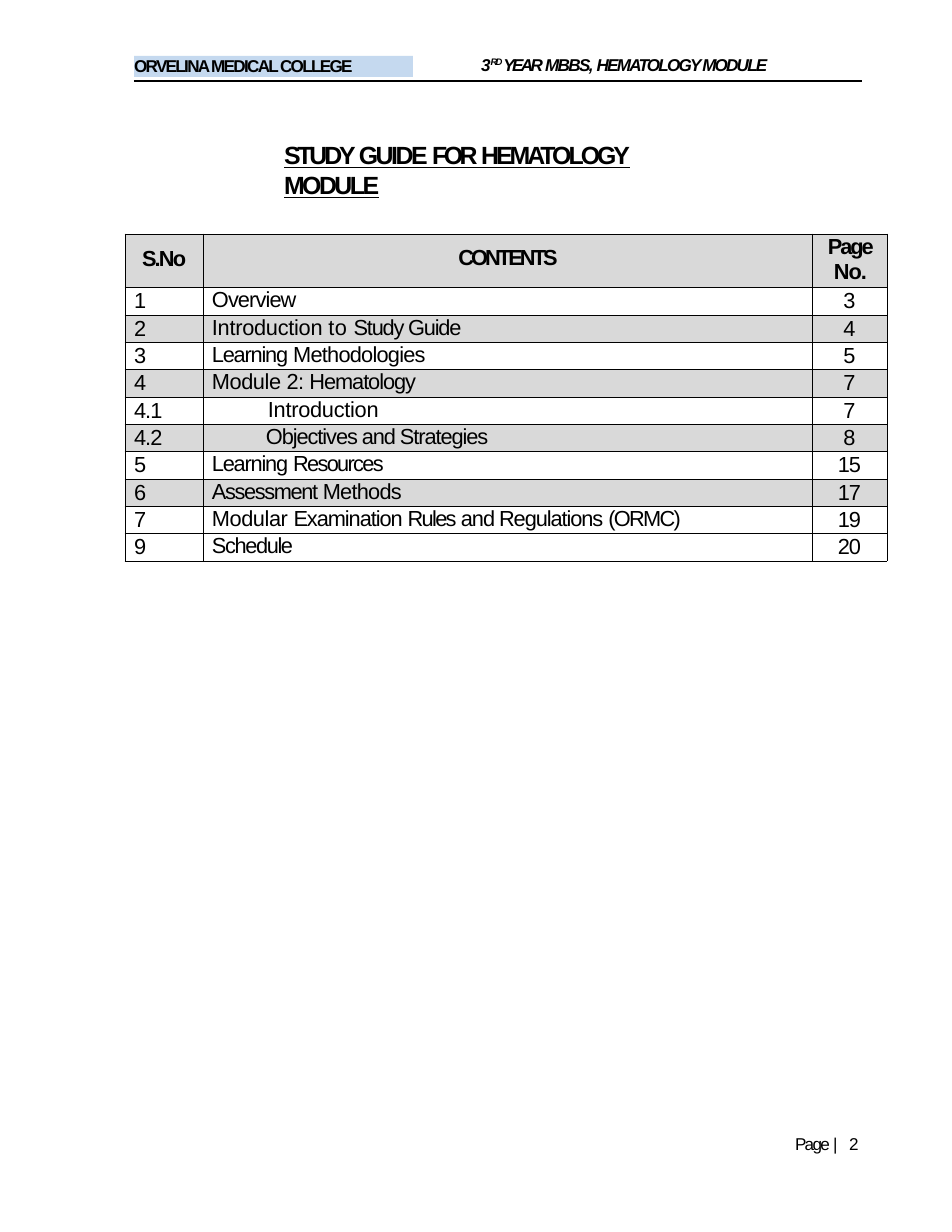
from dataclasses import dataclass
from typing import Optional, Sequence

from lxml.etree import SubElement
from pptx import Presentation
from pptx.dml.color import RGBColor
from pptx.enum.shapes import MSO_CONNECTOR, MSO_SHAPE
from pptx.enum.text import MSO_ANCHOR, MSO_AUTO_SIZE, PP_ALIGN
from pptx.oxml.ns import qn
from pptx.util import Emu, Pt

PX_PER_INCH = 112
BLACK, GRAY, BLUE = "000000", "D9D9D9", "C5D9EF"


@dataclass(frozen=True)
class Span:
    text: str
    tracking: float = 0  # points between letters
    size: Optional[float] = None
    baseline: int = 0  # percent of raise


@dataclass(frozen=True)
class Entry:
    number: Span
    topic: Sequence[Span]
    page: Span
    shaded: bool = False
    indent: int = 9


ENTRIES = [
    Entry(Span("1"), [Span("Overview", -0.6)], Span("3")),
    Entry(Span("2"), [Span("Introduction ", -0.2), Span("to ", 0.2),
                      Span("Study Guide", -0.8)], Span("4"), shaded=True),
    Entry(Span("3"), [Span("Learning ", -0.8), Span("Methodologies", -0.5)], Span("5")),
    Entry(Span("4"), [Span("Module ", -0.3), Span("2: ", -0.5),
                      Span("Hematology", -0.7)], Span("7"), shaded=True),
    Entry(Span("4.1", -0.6), [Span("Introduction", -0.2)], Span("7"), indent=65),
    Entry(Span("4.2", -0.6), [Span("Objectives and Strategies", -0.7)], Span("8"),
          shaded=True, indent=63),
    Entry(Span("5", -0.6), [Span("Learning ", -0.8), Span("Resources", -1.1)],
          Span("15", -0.8)),
    Entry(Span("6"), [Span("Assessment ", -0.9), Span("Methods", -0.5)],
          Span("17", -0.8), shaded=True),
    Entry(Span("7"), [Span("Modular ", -0.3), Span("Examination ", -0.7),
                      Span("Rules ", -1.1), Span("and Regulations ", -0.7),
                      Span("(ORMC)", -1.1)], Span("19", -0.8)),
    Entry(Span("9"), [Span("Schedule", -0.9)], Span("20", -0.7)),
]
COLUMN_WIDTHS = [78, 609, 75]
ROW_HEIGHTS = [53, 28] + [27, 27, 28] * 3


def px(length: int) -> Emu:
    return Emu(round(length * 914400 / PX_PER_INCH))


def color(value: str) -> RGBColor:
    return RGBColor.from_string(value)


def write(paragraph, spans: Sequence[Span], *, size: float = 14, bold: bool = False,
          italic: bool = False, underline: bool = False, indent: int = 0,
          before: float = 0, leading: Optional[float] = None,
          align: PP_ALIGN = PP_ALIGN.LEFT) -> None:
    paragraph.alignment = align
    paragraph.space_before = Pt(before)
    if leading:
        paragraph.line_spacing = Pt(leading)
    properties = paragraph._p.get_or_add_pPr()
    properties.set("marL", str(px(indent)))
    properties.set("indent", "0")
    for span in spans:
        run = paragraph.add_run()
        run.text = span.text
        font = run.font
        font.name, font.size = "Arial", Pt(span.size or size)
        font.bold, font.italic, font.underline = bold, italic, underline
        font.color.rgb = color(BLACK)
        run_properties = run._r.get_or_add_rPr()
        run_properties.set("spc", str(round(span.tracking * 100)))
        if span.baseline:
            run_properties.set("baseline", str(span.baseline * 1000))


def prepare_frame(shape, top_inset: int = 0):
    frame = shape.text_frame
    frame.word_wrap = True
    frame.auto_size = MSO_AUTO_SIZE.NONE
    frame.vertical_anchor = MSO_ANCHOR.TOP
    frame.margin_left = frame.margin_right = frame.margin_bottom = 0
    frame.margin_top = px(top_inset)
    return frame.paragraphs[0]


def add_text(slide, left: int, top: int, width: int, height: int,
             spans: Sequence[Span], top_inset: int = 0, **text_format) -> None:
    box = slide.shapes.add_textbox(px(left), px(top), px(width), px(height))
    write(prepare_frame(box, top_inset), spans, **text_format)


def style_cell(cell, shaded: bool, top_inset: int = 0) -> None:
    cell.margin_left = cell.margin_right = cell.margin_bottom = 0
    cell.margin_top = px(top_inset)
    cell_properties = cell._tc.get_or_add_tcPr()
    for side in ("a:lnL", "a:lnR", "a:lnT", "a:lnB"):
        border = SubElement(cell_properties, qn(side), w=str(Pt(0.5)))
        SubElement(SubElement(border, qn("a:solidFill")), qn("a:srgbClr"), val=BLACK)
    if shaded:
        cell.fill.solid()
        cell.fill.fore_color.rgb = color(GRAY)
    else:
        cell.fill.background()


def add_header(slide) -> None:
    rule = slide.shapes.add_connector(MSO_CONNECTOR.STRAIGHT, px(134), px(81),
                                      px(862), px(81))
    rule.line.color.rgb = color(BLACK)
    rule.line.width = Pt(0.75)
    SubElement(rule._element.spPr, qn("a:effectLst"))

    add_text(slide, 480, 53, 381, 22,
             [Span("3", -0.8), Span("RD ", -1.2, size=10.5, baseline=32),
              Span("YEAR ", -1.7), Span("MBBS, ", -1.1),
              Span("HEMATOLOGY MODULE", -1.2)],
             top_inset=1, size=11, bold=True, italic=True, indent=1, before=1)

    band = slide.shapes.add_shape(MSO_SHAPE.RECTANGLE, px(134), px(56), px(279), px(21))
    band.shadow.inherit = False
    band.fill.solid()
    band.fill.fore_color.rgb = color(BLUE)
    band.line.fill.background()
    write(prepare_frame(band), [Span("ORVELINA MEDICAL COLLEGE", -1.1)],
          size=11, bold=True, leading=12.9)


def add_title(slide) -> None:
    title = slide.shapes.title
    title.left, title.top, title.width, title.height = px(283), px(139), px(447), px(32)
    write(prepare_frame(title, 1),
          [Span("STUDY ", -2), Span("GUIDE ", -1.6), Span("FOR ", -2.2),
           Span("HEMATOLOGY", -1.9), Span(" ", -1.4), Span("MODULE", -1.6)],
          size=16, bold=True, underline=True, indent=1, before=0.9)


def add_contents(slide) -> None:
    table = slide.shapes.add_table(len(ROW_HEIGHTS), len(COLUMN_WIDTHS), px(125), px(234),
                                   px(sum(COLUMN_WIDTHS)), px(sum(ROW_HEIGHTS))).table
    table.first_row = table.horz_banding = False
    for column, width in zip(table.columns, COLUMN_WIDTHS):
        column.width = px(width)
    for row, height in zip(table.rows, ROW_HEIGHTS):
        row.height = px(height)

    # Heading row
    number, topic, page = table.rows[0].cells
    for cell, inset in ((number, 13), (topic, 12), (page, 0)):
        style_cell(cell, True, inset)
    write(number.text_frame.paragraphs[0], [Span("S.No", -1.2)],
          bold=True, indent=17, before=8.6)
    write(topic.text_frame.paragraphs[0], [Span("CONTENTS", -1.9)],
          bold=True, indent=1, before=8.2, align=PP_ALIGN.CENTER)
    write(page.text_frame.paragraphs[0], [Span("Page", -1.4)],
          bold=True, indent=16, leading=16.2)
    write(page.text_frame.add_paragraph(), [Span("No.", -0.7)],
          bold=True, indent=22, before=0.3)

    # Entries
    for row, entry in enumerate(ENTRIES, start=1):
        cells = table.rows[row].cells
        for cell in cells:
            style_cell(cell, entry.shaded)
        number, topic, page = (cell.text_frame.paragraphs[0] for cell in cells)
        write(number, [entry.number], indent=9, leading=16.6)
        write(topic, entry.topic, indent=entry.indent, leading=16.2)
        write(page, [entry.page], leading=16.6, align=PP_ALIGN.CENTER)


def main() -> None:
    presentation = Presentation()
    presentation.slide_width, presentation.slide_height = px(952), px(1232)
    slide = presentation.slides.add_slide(presentation.slide_layouts[5])
    add_header(slide)
    add_title(slide)
    add_contents(slide)
    # Page number
    add_text(slide, 794, 1136, 72, 20,
             [Span("Page ", -1.1), Span("| ", 2.2), Span("2", -0.6)],
             size=11, indent=1, leading=11.5)
    presentation.save("out.pptx")


if __name__ == "__main__":
    main()
